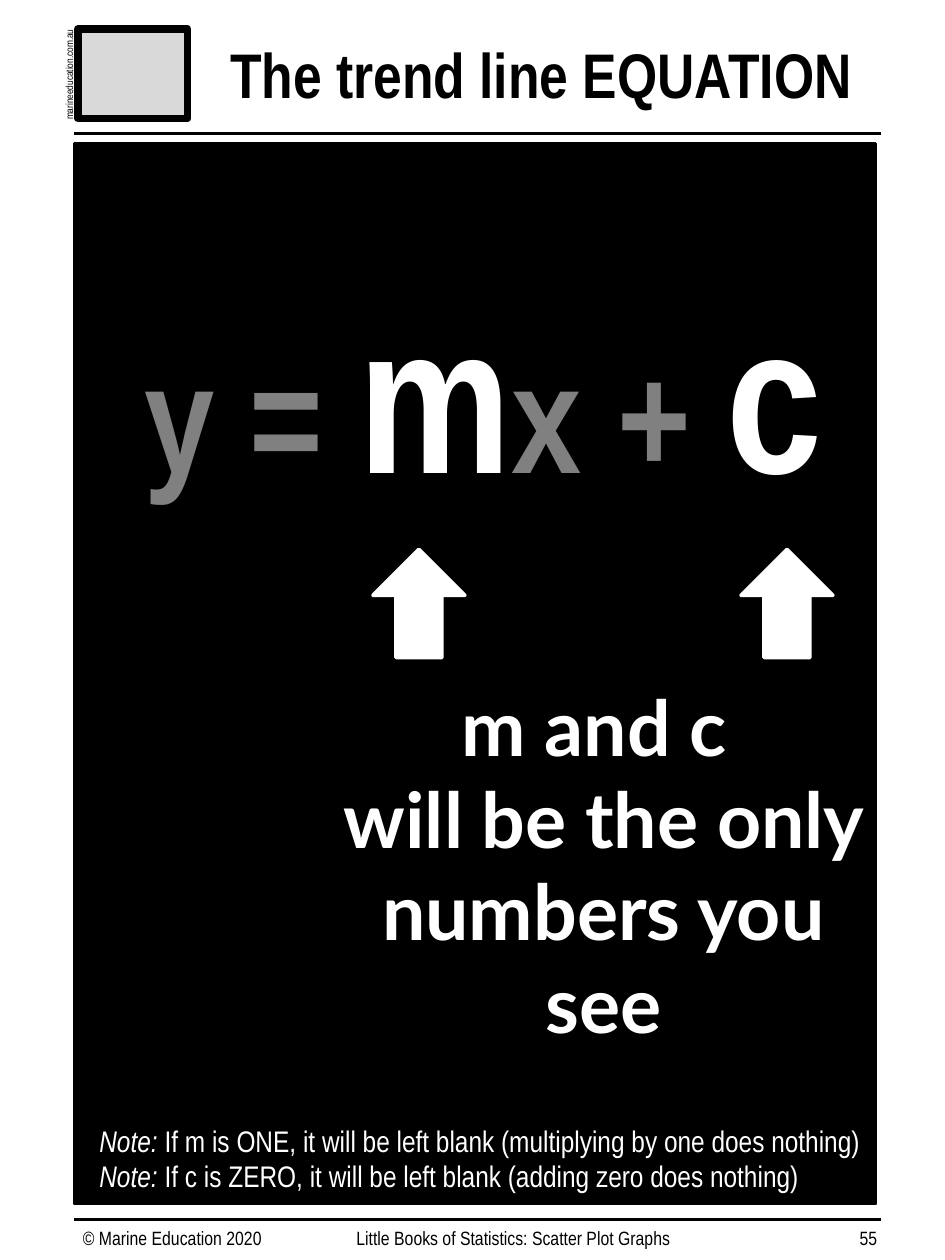
"""Builds the trend line equation page of a statistics booklet."""
from lxml import etree
from pptx import Presentation
from pptx.dml.color import RGBColor
from pptx.enum.shapes import MSO_CONNECTOR, MSO_SHAPE
from pptx.enum.text import MSO_ANCHOR, MSO_AUTO_SIZE, PP_ALIGN
from pptx.oxml.ns import qn
from pptx.util import Pt

RECT, UP_ARROW, STRAIGHT = MSO_SHAPE.RECTANGLE, MSO_SHAPE.UP_ARROW, MSO_CONNECTOR.STRAIGHT
LEFT, CENTER, RIGHT = PP_ALIGN.LEFT, PP_ALIGN.CENTER, PP_ALIGN.RIGHT
TOP, NO_FIT = MSO_ANCHOR.TOP, MSO_AUTO_SIZE.NONE
C = {"black": "000000", "white": "FFFFFF", "grey": "808080", "light": "D9D9D9"}
NARROW = "Arial Narrow"

prs = Presentation()
prs.slide_width, prs.slide_height = Pt(540), Pt(720)
s = prs.slides.add_slide(prs.slide_layouts[5])


def add_box(kind, x, y, w, h, fill, line, width):
    sp = s.shapes.add_shape(kind, Pt(x), Pt(y), Pt(w), Pt(h))
    sp.shadow.inherit = False
    sp.fill.solid()
    sp.fill.fore_color.rgb = RGBColor.from_string(C[fill])
    sp.line.color.rgb = RGBColor.from_string(C[line])
    sp.line.width = Pt(width)


def add_text(x, y, w, h, paragraphs, align=LEFT, font=NARROW, sp=None):
    sp = sp or s.shapes.add_textbox(Pt(x), Pt(y), Pt(w), Pt(h))
    sp.left, sp.top, sp.width, sp.height = Pt(x), Pt(y), Pt(w), Pt(h)
    tf = sp.text_frame
    tf.word_wrap, tf.auto_size, tf.vertical_anchor = True, NO_FIT, TOP
    for i, runs in enumerate(paragraphs):
        p = tf.add_paragraph() if i else tf.paragraphs[0]
        p.alignment = align
        for text, size, color, bold, italic in runs:
            r = p.add_run()
            r.text = text
            r.font.name, r.font.size = font, Pt(size)
            r.font.bold, r.font.italic = bold, italic
            r.font.color.rgb = RGBColor.from_string(C[color])
    return sp


add_text(115.2, 16.6, 388, 51.1, [[("The trend line EQUATION", 36, "black", True, False)]],
         CENTER, sp=s.shapes.title)

add_box(RECT, 44.6, 16.6, 62.6, 51.1, "light", "black", 4.5)
address = add_text(-4.3, 24.5, 87.8, 14.4,
                   [[("marineeducation.com.au", 5.8, "black", False, False)]])
address.rotation = 270

add_box(RECT, 42.5, 82.1, 457.9, 605.5, "black", "black", 2)
for y in (76.3, 697):
    rule = s.shapes.add_connector(STRAIGHT, Pt(42.5), Pt(y), Pt(503.6), Pt(y))
    rule.line.color.rgb = RGBColor.from_string(C["black"])
    rule.line.width = Pt(1.5)
    etree.SubElement(rule._element.spPr, qn("a:effectLst"))

equation = [("y = ", 88, "grey"), ("m", 120, "white"), ("x + ", 88, "grey"), ("c", 120, "white")]
add_text(64.1, 146.9, 424.1, 162.7, [[(*part, True, False) for part in equation]], CENTER)

for x in (213.1, 423.4):
    add_box(UP_ARROW, x, 313.9, 52.6, 61.9, "white", "white", 2)

message = ["m and c ", "will be the only numbers you see"]
add_text(186.5, 384.5, 316.8, 167, [[(t, 44, "white", True, False)] for t in message],
         CENTER, "Lato")

notes = ["If m is ONE, it will be left blank (multiplying by one does nothing)",
         "If c is ZERO, it will be left blank (adding zero does nothing)"]
add_text(49.7, 637.9, 490.3, 48.2,
         [[("Note: ", 17, "white", False, True), (t, 17, "white", False, False)] for t in notes])

footers = [(40.3, 172.8, "© Marine Education 2020", LEFT),
           (196.6, 211.7, "Little Books of Statistics: Scatter Plot Graphs", LEFT),
           (432.7, 75.6, "55", RIGHT)]
for x, w, text, align in footers:
    add_text(x, 697, w, 20.9, [[(text, 11, "black", False, False)]], align)

prs.save("out.pptx")
